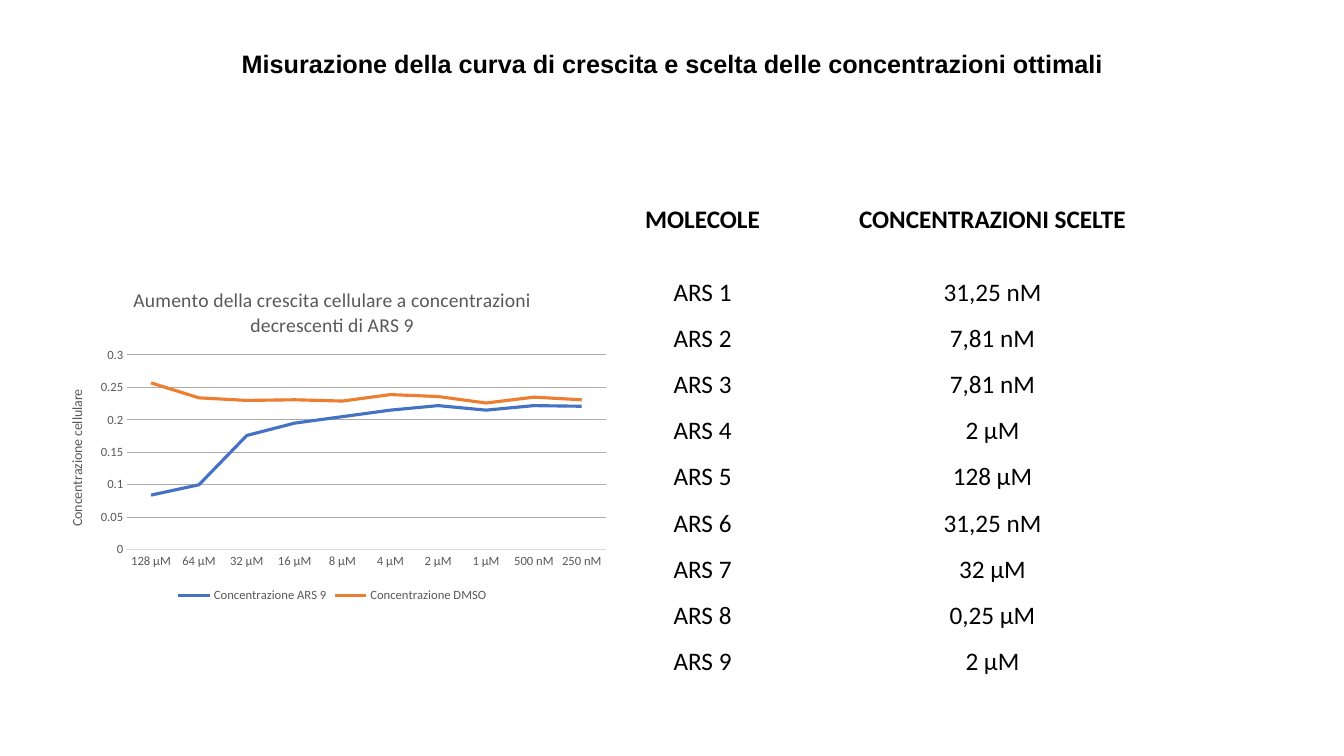
"""Build the slide on the growth curve and the chosen concentrations."""
from dataclasses import dataclass

from lxml.etree import SubElement
from pptx import Presentation
from pptx.chart.data import CategoryChartData
from pptx.dml.color import RGBColor
from pptx.enum.chart import XL_CHART_TYPE as ChartType, XL_LEGEND_POSITION as LegendSpot
from pptx.enum.chart import XL_TICK_MARK as TickMark
from pptx.enum.text import MSO_ANCHOR as Anchor, PP_ALIGN as Align
from pptx.oxml.ns import qn
from pptx.util import Inches, Length, Pt

BLACK = RGBColor(0x00, 0x00, 0x00)
GREY = RGBColor(0x59, 0x59, 0x59)
AXIS_GREY = RGBColor(0xD9, 0xD9, 0xD9)
GRID_GREY = RGBColor(0xAF, 0xAB, 0xAB)
BLUE = RGBColor(0x44, 0x72, 0xC4)
ORANGE = RGBColor(0xED, 0x7D, 0x31)

SLIDE_W, SLIDE_H = Inches(13.33), Inches(7.5)
HEADER_SHARE = 8.27


@dataclass(frozen=True)
class Area:
    """A rectangle in percent of the slide's width and height."""
    left: float
    top: float
    width: float
    height: float

    def box(self) -> tuple[Length, ...]:
        return (across(self.left), down(self.top), across(self.width), down(self.height))


@dataclass(frozen=True)
class Curve:
    name: str
    color: RGBColor
    values: tuple[float, ...]


@dataclass(frozen=True)
class Choice:
    molecule: str
    concentration: str


HEADING_AREA = Area(17.25, 5.73, 67.8, 5.33)
CHOICES_AREA = Area(41.49, 26.4, 43.14, 63.2)
GROWTH_AREA = Area(3.53, 35.87, 42.39, 44.4)
PLOT_LAYOUT = {"x": 0.14, "y": 0.25, "w": 0.84, "h": 0.58}

DOSES = ("128 μM", "64 μM", "32 μM", "16 μM", "8 μM", "4 μM", "2 μM", "1 μM", "500 nM", "250 nM")
CURVES = (
    Curve("Concentrazione ARS 9", BLUE,
          (0.084, 0.1, 0.176, 0.195, 0.205, 0.215, 0.222, 0.215, 0.222, 0.221)),
    Curve("Concentrazione DMSO", ORANGE,
          (0.257, 0.234, 0.23, 0.231, 0.229, 0.239, 0.236, 0.226, 0.235, 0.231)),
)
HEADER = Choice("MOLECOLE", "CONCENTRAZIONI SCELTE")
CONCENTRATIONS = ("31,25 nM", "7,81 nM", "7,81 nM", "2 μM", "128 μM",
                  "31,25 nM", "32 μM", "0,25 μM", "2 μM")
CHOICES = tuple(Choice(f"ARS {n}", dose) for n, dose in enumerate(CONCENTRATIONS, 1))


def across(percent: float) -> Length:
    return Length(round(SLIDE_W * percent / 100))


def down(percent: float) -> Length:
    return Length(round(SLIDE_H * percent / 100))


def style(font, size: float, color: RGBColor, bold: bool = False, face: str = "Calibri") -> None:
    font.name, font.size, font.bold = face, Pt(size), bold
    font.color.rgb = color


def write(paragraph, text: str, size: float, color: RGBColor, bold: bool = False,
          face: str = "Calibri") -> None:
    run = paragraph.add_run()
    run.text = text
    style(run.font, size, color, bold, face)


def draw_heading(slide) -> None:
    frame = slide.shapes.add_textbox(*HEADING_AREA.box()).text_frame
    frame.word_wrap = True
    write(frame.paragraphs[0],
          "Misurazione della curva di crescita e scelta delle concentrazioni ottimali",
          18, BLACK, True, "Arial")


def fill_cell(cell, text: str, is_header: bool) -> None:
    cell.fill.background()
    paragraph = cell.text_frame.paragraphs[0]
    paragraph.alignment = Align.CENTER
    if not is_header:
        cell.vertical_anchor = Anchor.MIDDLE
        cell.margin_left = cell.margin_right = Inches(0.07)
        cell.margin_top = cell.margin_bottom = 0
        paragraph.line_spacing = 1.5
        paragraph.space_after = Pt(8)
    write(paragraph, text, 18, BLACK, is_header)


def draw_choices(slide) -> None:
    lines = (HEADER, *CHOICES)
    table = slide.shapes.add_table(len(lines), 2, *CHOICES_AREA.box()).table
    table.first_row = table.horz_banding = False
    body_share = (CHOICES_AREA.height - HEADER_SHARE) / len(CHOICES)
    for index, choice in enumerate(lines):
        is_header = index == 0
        table.rows[index].height = down(HEADER_SHARE if is_header else body_share)
        for column, text in enumerate((choice.molecule, choice.concentration)):
            fill_cell(table.cell(index, column), text, is_header)


def place_plot(chart) -> None:
    plot_area = chart._chartSpace.chart.plotArea
    for old in plot_area.findall(qn("c:layout")):
        plot_area.remove(old)
    layout = SubElement(plot_area, qn("c:layout"))
    plot_area.insert(0, layout)
    manual = SubElement(layout, qn("c:manualLayout"))
    modes = {"layoutTarget": "inner", "xMode": "edge", "yMode": "edge"}
    for tag, value in {**modes, **PLOT_LAYOUT}.items():
        SubElement(manual, qn(f"c:{tag}")).set("val", str(value))


def style_axes(chart) -> None:
    doses, growth = chart.category_axis, chart.value_axis
    for axis in (doses, growth):
        axis.major_tick_mark = axis.minor_tick_mark = TickMark.NONE
        style(axis.tick_labels.font, 9, GREY)
    doses.format.line.color.rgb = AXIS_GREY
    doses.format.line.width = Pt(0.75)
    growth.format.line.fill.background()
    growth.minimum_scale, growth.maximum_scale, growth.major_unit = 0, 0.3, 0.05
    growth.has_major_gridlines = True
    growth.major_gridlines.format.line.color.rgb = GRID_GREY
    growth.major_gridlines.format.line.width = Pt(0.75)
    write(growth.axis_title.text_frame.paragraphs[0], "Concentrazione cellulare", 10, GREY)


def draw_growth(slide) -> None:
    data = CategoryChartData(number_format="General")
    data.categories = DOSES
    for curve in CURVES:
        data.add_series(curve.name, curve.values)
    chart = slide.shapes.add_chart(ChartType.LINE, *GROWTH_AREA.box(), data).chart
    style(chart.font, 10, BLACK)
    chart.has_title = True
    write(chart.chart_title.text_frame.paragraphs[0],
          "Aumento della crescita cellulare a concentrazioni decrescenti di ARS 9", 14, GREY)
    chart.chart_title.include_in_layout = False
    chart.has_legend = True
    chart.legend.position = LegendSpot.BOTTOM
    chart.legend.include_in_layout = False
    style(chart.legend.font, 9, GREY)
    chart.plots[0].vary_by_categories = False
    for series, curve in zip(chart.plots[0].series, CURVES):
        series.smooth = False
        series.format.line.color.rgb = curve.color
        series.format.line.width = Pt(2.25)
    style_axes(chart)
    place_plot(chart)


def main() -> None:
    deck = Presentation()
    deck.slide_width, deck.slide_height = SLIDE_W, SLIDE_H
    slide = deck.slides.add_slide(deck.slide_layouts[6])
    draw_heading(slide)
    draw_choices(slide)
    draw_growth(slide)
    deck.save("out.pptx")


if __name__ == "__main__":
    main()
